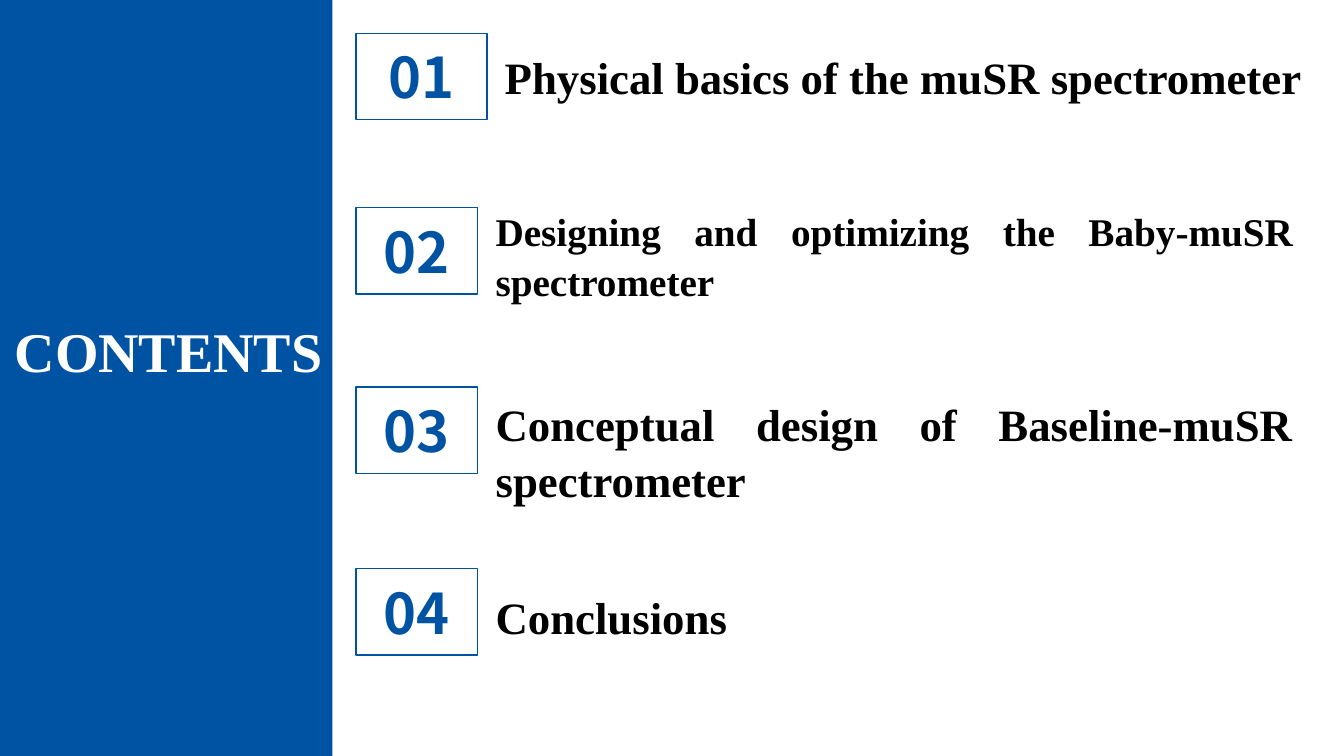
"""Build the contents slide of a spectrometer talk."""
from pptx import Presentation
from pptx.dml.color import RGBColor
from pptx.enum.shapes import MSO_SHAPE
from pptx.enum.text import MSO_ANCHOR, MSO_AUTO_SIZE, PP_ALIGN
from pptx.util import Cm, Pt

BLUE = RGBColor(0x00, 0x53, 0xA3)
WHITE = RGBColor(0xFF, 0xFF, 0xFF)
BLACK = RGBColor(0x00, 0x00, 0x00)
SERIF = "Times New Roman"
SANS = "Noto Sans CJK SC"

PANEL_WIDTH = Cm(8.38)
FRAME_LEFT = Cm(8.97)
FRAME_HEIGHT = Cm(2.18)
HEADING_GAP = Cm(0.2)

# heading, size, frame top, frame width, heading top, width, height
ENTRIES = [
    ("Physical basics of the muSR spectrometer", 32, 0.84, 3.3, 1.07, 21.36, 3),
    ("Designing and optimizing the Baby-muSR spectrometer", 28, 5.23, 3.07, 5.05, 20.6, 2.64),
    ("Conceptual design of Baseline-muSR spectrometer", 32, 9.75, 3.07, 9.8, 20.6, 3),
    ("Conclusions", 32, 14.33, 3.07, 14.66, 20.6, 1.63),
]


def write(box, text, font_name, size, color, alignment, anchor=MSO_ANCHOR.TOP):
    """Fill a shape with one bold paragraph."""
    frame = box.text_frame
    frame.text = text
    frame.word_wrap = True
    frame.auto_size = MSO_AUTO_SIZE.NONE
    frame.vertical_anchor = anchor
    paragraph = frame.paragraphs[0]
    paragraph.alignment = alignment
    for span in paragraph.runs:
        span.font.name = font_name
        span.font.size = Pt(size)
        span.font.bold = True
        span.font.color.rgb = color
    return paragraph


def add_title_panel(page, height):
    """Put the title on a full-height blue panel."""
    panel = page.shapes.add_shape(MSO_SHAPE.RECTANGLE, 0, 0, PANEL_WIDTH, height)
    panel.shadow.inherit = False
    panel.fill.solid()
    panel.fill.fore_color.rgb = BLUE
    panel.line.fill.background()
    title = page.shapes.title
    title.element.addprevious(panel.element)
    title.left, title.top = Cm(0), Cm(7.85)
    title.width, title.height = PANEL_WIDTH, Cm(1.96)
    write(title, "CONTENTS", SERIF, 40, WHITE, PP_ALIGN.RIGHT)
    title.text_frame.margin_left = 0


def add_number(group, number, top, width):
    """Add a framed entry number."""
    box = group.shapes.add_shape(
        MSO_SHAPE.RECTANGLE, FRAME_LEFT, top, width, FRAME_HEIGHT)
    box.shadow.inherit = False
    box.fill.background()
    box.line.color.rgb = BLUE
    box.line.width = Pt(1)
    write(box, f"{number:02d}", SANS, 40, BLUE, PP_ALIGN.CENTER, MSO_ANCHOR.MIDDLE)
    box.text_frame.margin_top = box.text_frame.margin_bottom = 0


def add_heading(group, text, size, left, top, width, height):
    """Add a justified entry heading."""
    box = group.shapes.add_textbox(left, top, width, height)
    paragraph = write(box, text, SERIF, size, BLACK, PP_ALIGN.JUSTIFY)
    paragraph.line_spacing = 1.05


def main():
    """Create and save the deck."""
    deck = Presentation()
    deck.slide_width, deck.slide_height = Cm(33.87), Cm(19.05)
    page = deck.slides.add_slide(deck.slide_layouts.get_by_name("Title Only"))
    add_title_panel(page, deck.slide_height)
    for number, entry in enumerate(ENTRIES, start=1):
        text, size, *lengths = entry
        frame_top, frame_width, top, width, height = map(Cm, lengths)
        group = page.shapes.add_group_shape()
        add_heading(group, text, size, FRAME_LEFT + frame_width + HEADING_GAP,
                    top, width, height)
        add_number(group, number, frame_top, frame_width)
    deck.save("out.pptx")


if __name__ == "__main__":
    main()
